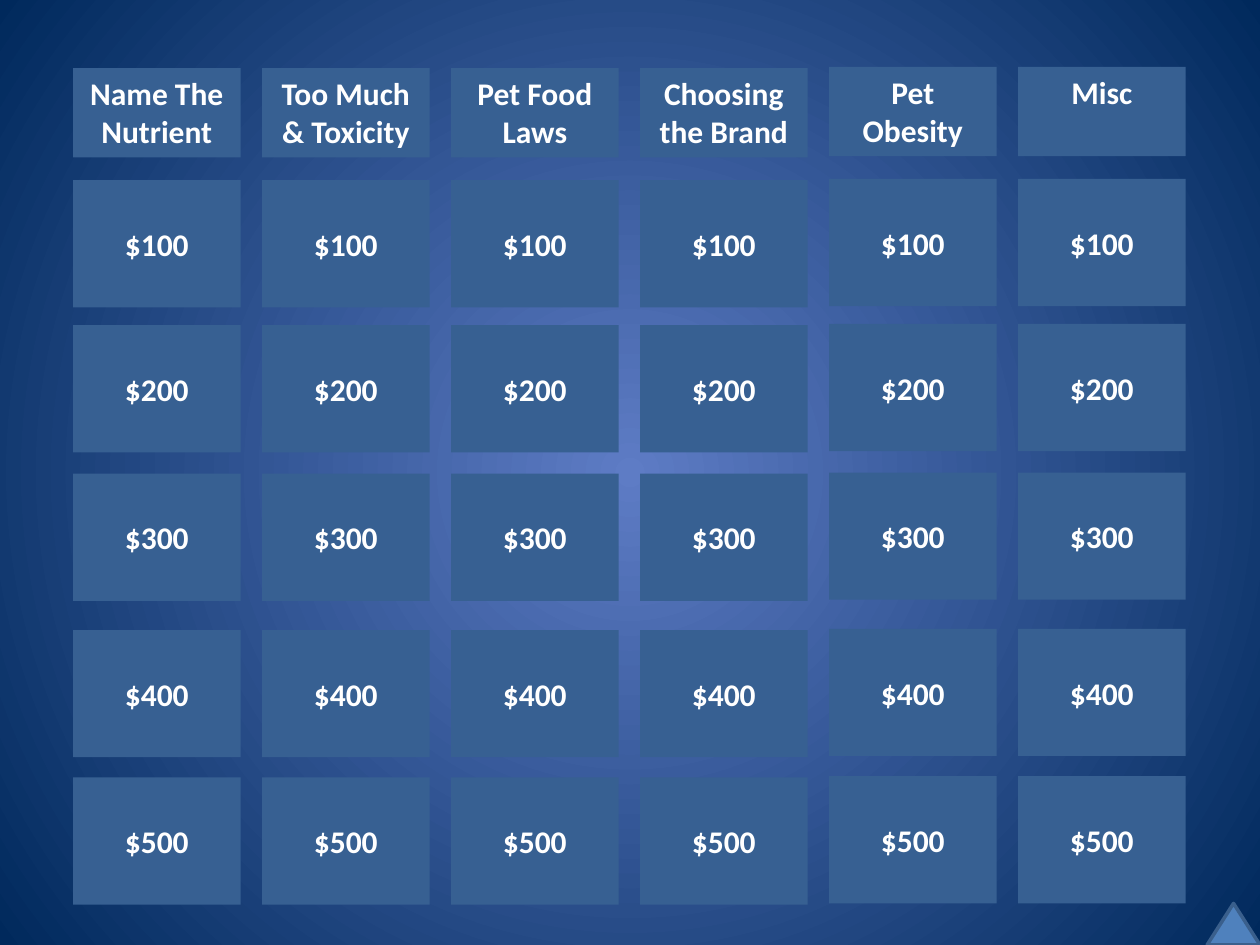
from lxml.etree import SubElement
from pptx import Presentation
from pptx.dml.color import RGBColor
from pptx.enum.shapes import MSO_SHAPE
from pptx.enum.text import MSO_ANCHOR, PP_ALIGN
from pptx.oxml.ns import qn
from pptx.util import Inches, Pt

COLORS = {"glow": "5E7CC5", "edge": "00295C", "tile": "376092",
          "text": "FFFFFF", "button": "4F81BD", "button_line": "3A5F8C"}
TEXT_FORMAT = {"name": "Calibri", "size": Pt(18), "bold": True}

# The slide is a grid of 10 columns by 7.5 rows
SLIDE_WIDTH, SLIDE_HEIGHT = Inches(10), Inches(7.5)
COLUMN, ROW = SLIDE_WIDTH / 10, SLIDE_HEIGHT / 7.5

CATEGORIES = ["Name The Nutrient", "Too Much & Toxicity", "Pet Food Laws",
              "Choosing the Brand", "Pet Obesity", "Misc"]
VALUE_TOPS = {"$100": 0.89, "$200": 2.04, "$300": 3.22, "$400": 4.46, "$500": 5.63}
CATEGORY_PITCH, TILE_WIDTH = 1.5, 1.33
HEADER_HEIGHT, VALUE_HEIGHT = 0.71, 1.01
RAISED_FROM, RAISE = 4, 0.01


def color(name):
    return RGBColor.from_string(COLORS[name])


def add_block(page, kind, box, fill):
    left, top, width, height = box
    block = page.shapes.add_shape(kind, round(left * COLUMN), round(top * ROW),
                                  round(width * COLUMN), round(height * ROW))
    block.shadow.inherit = False
    block.fill.solid()
    block.fill.fore_color.rgb = color(fill)
    return block


def add_tile(page, box, text, anchor):
    tile = add_block(page, MSO_SHAPE.RECTANGLE, box, "tile")
    tile.line.fill.background()
    frame = tile.text_frame
    frame.word_wrap = True
    frame.vertical_anchor = anchor
    para = frame.paragraphs[0]
    para.alignment = PP_ALIGN.CENTER
    span = para.add_run()
    span.text = text
    for key, value in TEXT_FORMAT.items():
        setattr(span.font, key, value)
    span.font.color.rgb = color("text")


def add_background(page):
    fill = page.background.fill
    fill.gradient()
    for stop, name in zip(fill.gradient_stops, ("glow", "edge")):
        stop.color.rgb = color(name)
    # Turn the linear gradient into a circular one
    gradient = page.background._cSld.find(".//" + qn("a:gradFill"))
    gradient.remove(gradient.find(qn("a:lin")))
    circle = SubElement(gradient, qn("a:path"), {"path": "circle"})
    SubElement(circle, qn("a:fillToRect"), dict.fromkeys("ltrb", "50000"))


def add_board(page, left, top):
    for index, category in enumerate(CATEGORIES):
        tile_left = left + index * CATEGORY_PITCH
        tile_top = top - (RAISE if index >= RAISED_FROM else 0)
        # Category header
        add_tile(page, (tile_left, tile_top, TILE_WIDTH, HEADER_HEIGHT),
                 category, MSO_ANCHOR.TOP)
        # Question values
        for value, offset in VALUE_TOPS.items():
            add_tile(page, (tile_left, tile_top + offset, TILE_WIDTH, VALUE_HEIGHT),
                     value, MSO_ANCHOR.MIDDLE)


def add_corner_button(page, box):
    button = add_block(page, MSO_SHAPE.ISOSCELES_TRIANGLE, box, "button")
    button.line.color.rgb = color("button_line")
    button.line.width = Pt(2)


def main():
    deck = Presentation()
    deck.slide_width, deck.slide_height = SLIDE_WIDTH, SLIDE_HEIGHT
    page = deck.slides.add_slide(deck.slide_layouts[6])
    add_background(page)
    add_board(page, 0.58, 0.54)
    add_corner_button(page, (9.58, 7.17, 0.42, 0.33))
    deck.save("out.pptx")


if __name__ == "__main__":
    main()
